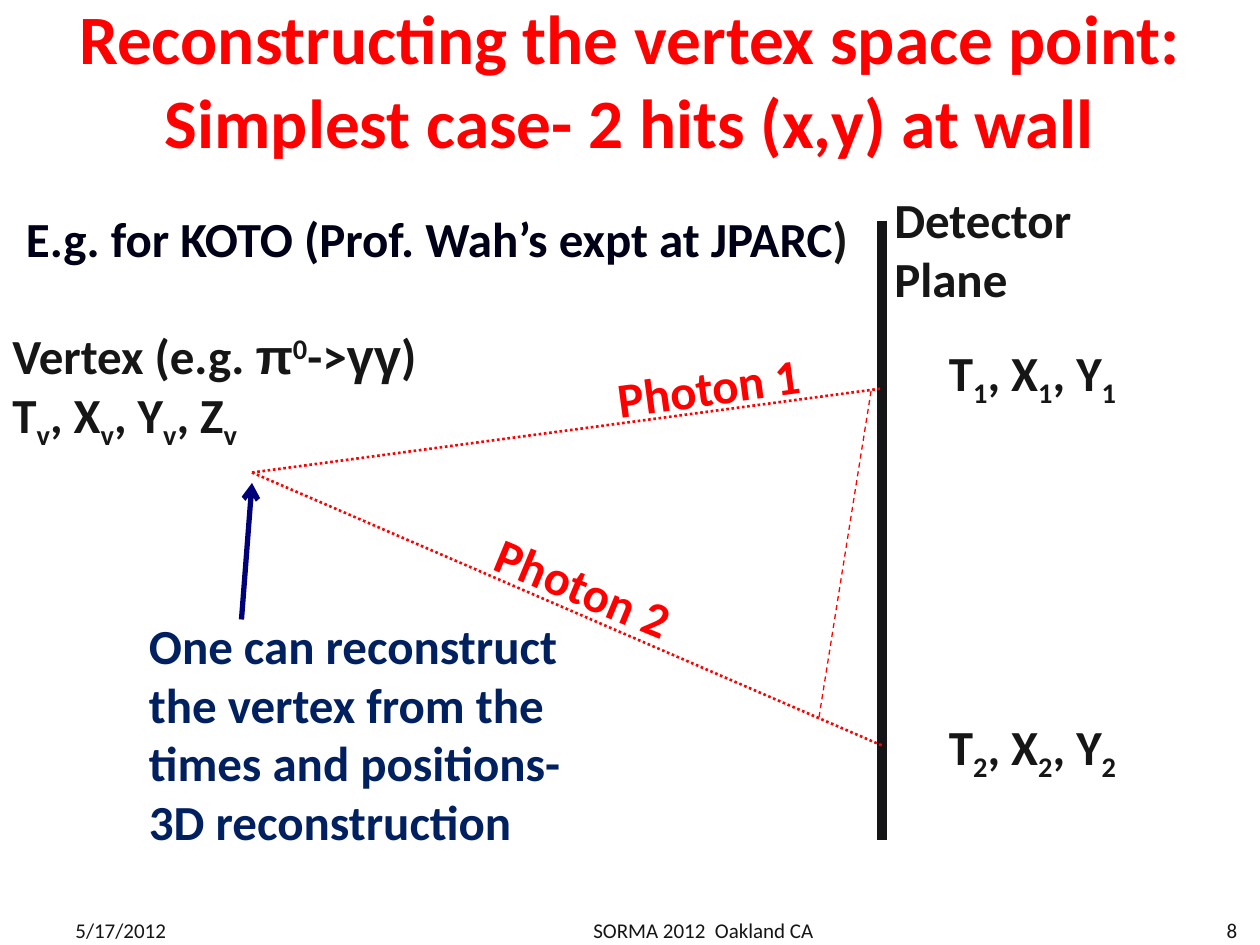
import dataclasses

import lxml.etree
import pptx
import pptx.dml.color
import pptx.enum.dml
import pptx.enum.shapes
import pptx.enum.text
import pptx.oxml.ns
import pptx.util

DASH = pptx.enum.dml.MSO_LINE
ALIGN = pptx.enum.text.PP_ALIGN
MID = pptx.enum.text.MSO_ANCHOR.MIDDLE
TOP = pptx.enum.text.MSO_ANCHOR.TOP
COLS, ROWS = 120, 90
WIDE, HIGH = pptx.util.Inches(10), pptx.util.Inches(7.5)


@dataclasses.dataclass(frozen=True)
class Theme:
    """Colours, fonts and type sizes."""
    red: str = "FF0000"
    ink: str = "161616"
    wall: str = "151517"
    navy: str = "002060"
    night: str = "000018"
    arrow: str = "000079"
    face: str = "Calibri"
    greek: str = "Arial"
    head: float = 39.6
    body: float = 28
    foot: float = 12


THEME = Theme()


def col(num):
    """Turn grid columns into a length."""
    return round(WIDE * num / COLS)


def row(num):
    """Turn grid rows into a length."""
    return round(HIGH * num / ROWS)


def tint(hue):
    """Turn a hex string into a colour."""
    return pptx.dml.color.RGBColor.from_string(hue)


def apply(item, form):
    """Set each value of a dict as an attribute."""
    for key, val in form.items():
        setattr(item, key, val)


def add_run(para, text, size, hue, bold, face=THEME.face, base=0):
    """Add one run with its format to a paragraph."""
    run = para.add_run()
    run.text = text
    apply(run.font, {"name": face, "size": pptx.util.Pt(size), "bold": bold})
    run.font.color.rgb = tint(hue)
    if base:
        run.font._element.set("baseline", str(base * 1000))


def add_text(slide, area, lines, hue=THEME.ink, size=THEME.body, bold=True,
             align=ALIGN.LEFT, anchor=TOP, turn=0):
    """Add a text box whose lines are lists of (text, format) runs."""
    left, top, wide, high = area
    box = slide.shapes.add_textbox(col(left), row(top), col(wide), row(high))
    box.rotation = turn
    frame = box.text_frame
    apply(frame, {"word_wrap": True, "vertical_anchor": anchor})
    for num, runs in enumerate(lines):
        para = frame.add_paragraph() if num else frame.paragraphs[0]
        para.alignment = align
        for text, form in runs:
            add_run(para, text, **{"size": size, "hue": hue, "bold": bold, **form})


def add_line(slide, start, end, hue, width, dash=None, arrow=False):
    """Add a straight line, dashed or with an arrowhead if asked."""
    line = slide.shapes.add_connector(
        pptx.enum.shapes.MSO_CONNECTOR.STRAIGHT,
        col(start[0]), row(start[1]), col(end[0]), row(end[1]))
    line.line.color.rgb = tint(hue)
    apply(line.line, {"width": pptx.util.Pt(width), "dash_style": dash})
    name = pptx.oxml.ns.qn
    if arrow:
        lxml.etree.SubElement(line.line._ln, name("a:tailEnd"), type="arrow")
    lxml.etree.SubElement(line._element.spPr, name("a:effectLst"))


def plain(text):
    """Make a single line of one run."""
    return [[(text, {})]]


def index(names, mark):
    """Make runs of names that share one subscript."""
    runs = []
    for num, name in enumerate(names):
        runs += [(", " + name if num else name, {}), (mark, {"base": -25})]
    return runs


def add_foot(slide):
    """Add the date, the meeting and the page number."""
    for left, wide, text, align in (
            (6, 28, "5/17/2012", ALIGN.LEFT),
            (48, 38, "SORMA 2012  Oakland CA", ALIGN.CENTER),
            (91, 28, "8", ALIGN.RIGHT)):
        add_text(slide, (left, 86.2, wide, 4.8), plain(text), THEME.wall,
                 THEME.foot, False, align, MID)


def add_rays(slide):
    """Add the wall, both photon tracks and the arrow to the vertex."""
    vertex = (24, 45)
    add_line(slide, (84, 21), (84, 80), THEME.wall, 6)
    for hit in (37, 71):
        add_line(slide, vertex, (84, hit), THEME.red, 1.5, DASH.ROUND_DOT)
    add_line(slide, (78, 68.3), (83, 37), THEME.red, 0.75, DASH.DASH)
    add_line(slide, (23, 59), (24, 46), THEME.arrow, 3, arrow=True)


def add_notes(slide):
    """Add the labels around the tracks."""
    for mark, top in (("1", 32), ("2", 67.6)):
        add_text(slide, (89.2, top, 29, 6.9), [index("TXY", mark)])
    greek = {"face": THEME.greek}
    decay = [("Vertex (e.g. ", {}), ("π", greek), ("0", {"base": 30}),
             ("->", {}), ("γγ", greek), (")", {})]
    add_text(slide, (0, 30.4, 46, 12.5), [decay, index("TXYZ", "v")])
    for text, area, turn in (
            ("Photon 1", (57.6, 33.4, 20, 6.9), 352.3),
            ("Photon 2", (44.6, 52.3, 20, 12.5), 22.5)):
        add_text(slide, area, plain(text), THEME.red, turn=turn)
    add_text(slide, (84, 17.5, 29, 12.5), plain("Detector Plane"))
    add_text(slide, (13, 58, 44.3, 23.9), plain(
        "One can reconstruct the vertex from the times and positions- "
        "3D reconstruction"), THEME.navy)
    add_text(slide, (1.3, 19.3, 81.6, 6.9), [[
        ("E.g. for KOTO (Prof. Wah’s expt at JPARC", {"hue": THEME.night}),
        (")", {})]])


def main():
    """Build and save the slide."""
    deck = pptx.Presentation()
    apply(deck, {"slide_width": WIDE, "slide_height": HIGH})
    slide = deck.slides.add_slide(deck.slide_layouts[6])
    add_text(slide, (3, 0, 114, 15), plain(
        "Reconstructing the vertex space point: "
        "Simplest case- 2 hits (x,y) at wall"),
        THEME.red, THEME.head, align=ALIGN.CENTER, anchor=MID)
    add_foot(slide)
    add_rays(slide)
    add_notes(slide)
    deck.save("out.pptx")


if __name__ == "__main__":
    main()
